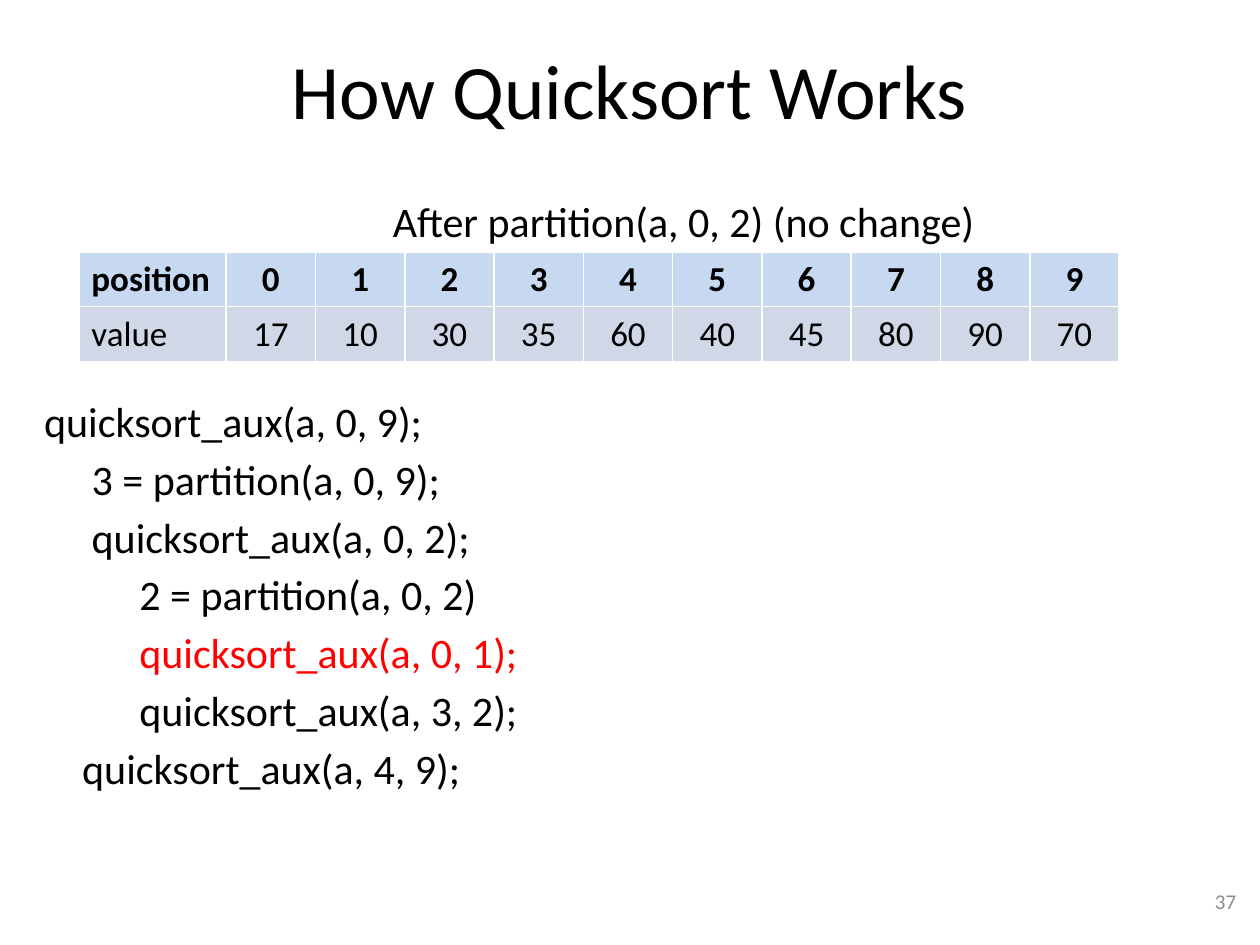
from dataclasses import dataclass

from pptx import Presentation
from pptx.dml.color import RGBColor
from pptx.enum.text import MSO_ANCHOR, PP_ALIGN
from pptx.util import Cm, Pt

LEFT, CENTER, RIGHT = PP_ALIGN.LEFT, PP_ALIGN.CENTER, PP_ALIGN.RIGHT
MIDDLE = MSO_ANCHOR.MIDDLE


@dataclass(frozen=True)
class Theme:
    font: str = "Calibri"
    ink: str = "000000"
    mark: str = "FF0000"
    muted: str = "8C8C8C"
    head: str = "C6D9F1"
    row: str = "D0D8E8"
    title: int = 44
    body: int = 24
    cell: int = 20
    small: int = 12


THEME = Theme()


def write(para, text, size, color=THEME.ink, align=LEFT, bold=False):
    """Add one styled run to a paragraph and align the paragraph."""
    para.alignment = align
    run = para.add_run()
    run.text = text
    run.font.name = THEME.font
    run.font.size = Pt(size)
    run.font.bold = bold
    run.font.color.rgb = RGBColor.from_string(color)


def add_box(left, top, width, height, wrap=True):
    """Add a text box, measured in centimetres, and return its frame."""
    box = slide.shapes.add_textbox(Cm(left), Cm(top), Cm(width), Cm(height))
    box.text_frame.word_wrap = wrap
    return box.text_frame


deck = Presentation()
deck.slide_width, deck.slide_height = Cm(25.4), Cm(19.05)
slide = deck.slides.add_slide(deck.slide_layouts[5])

# Title
title = slide.shapes.title
title.left, title.top = Cm(1.27), Cm(0.2)
title.width, title.height = Cm(22.86), Cm(3.18)
title.text_frame.vertical_anchor = MIDDLE
write(title.text_frame.paragraphs[0], "How Quicksort Works", THEME.title, align=CENTER)

# Call trace: indent in cm, text, colour
STEP = 0.96
calls = [
    (0, "quicksort_aux(a, 0, 9);", THEME.ink),
    (STEP, "3 = partition(a, 0, 9);", THEME.ink),
    (STEP, "quicksort_aux(a, 0, 2);", THEME.ink),
    (2 * STEP, "2 = partition(a, 0, 2)", THEME.ink),
    (2 * STEP, "quicksort_aux(a, 0, 1);", THEME.mark),
    (2 * STEP, "quicksort_aux(a, 3, 2);", THEME.ink),
    (0.8 * STEP, "quicksort_aux(a, 4, 9);", THEME.ink),
]
trace = add_box(0.64, 7.85, 22.86, 9.93)
for i, (indent, text, color) in enumerate(calls):
    para = trace.add_paragraph() if i else trace.paragraphs[0]
    para.space_before = Pt(4.2)
    para._p.get_or_add_pPr().set("marL", str(Cm(indent)))
    write(para, text, THEME.body, color)

# Slide number
number = add_box(19.25, 17.65, 5.92, 1.02)
number.vertical_anchor = MIDDLE
write(number.paragraphs[0], "37", THEME.small, THEME.muted, RIGHT)

# Array table
values = [17, 10, 30, 35, 60, 40, 45, 80, 90, 70]
rows = [["position", *range(len(values))], ["value", *values]]
frame = slide.shapes.add_table(
    len(rows), len(rows[0]), Cm(1.59), Cm(5.08), Cm(20.97), Cm(2.2)
)
table = frame.table
for c, col in enumerate(table.columns):
    col.width = Cm(1.8 if c else 2.97)
for r, row in enumerate(rows):
    table.rows[r].height = Cm(1.1)
    for c, item in enumerate(row):
        cell = table.cell(r, c)
        cell.fill.solid()
        cell.fill.fore_color.rgb = RGBColor.from_string(THEME.row if r else THEME.head)
        write(
            cell.text_frame.paragraphs[0], str(item), THEME.cell,
            align=CENTER if c else LEFT, bold=r == 0,
        )

# Table caption
caption = add_box(7.67, 3.81, 12.37, 1.27, wrap=False)
write(caption.paragraphs[0], "After partition(a, 0, 2) (no change)", THEME.body)

deck.save("out.pptx")
